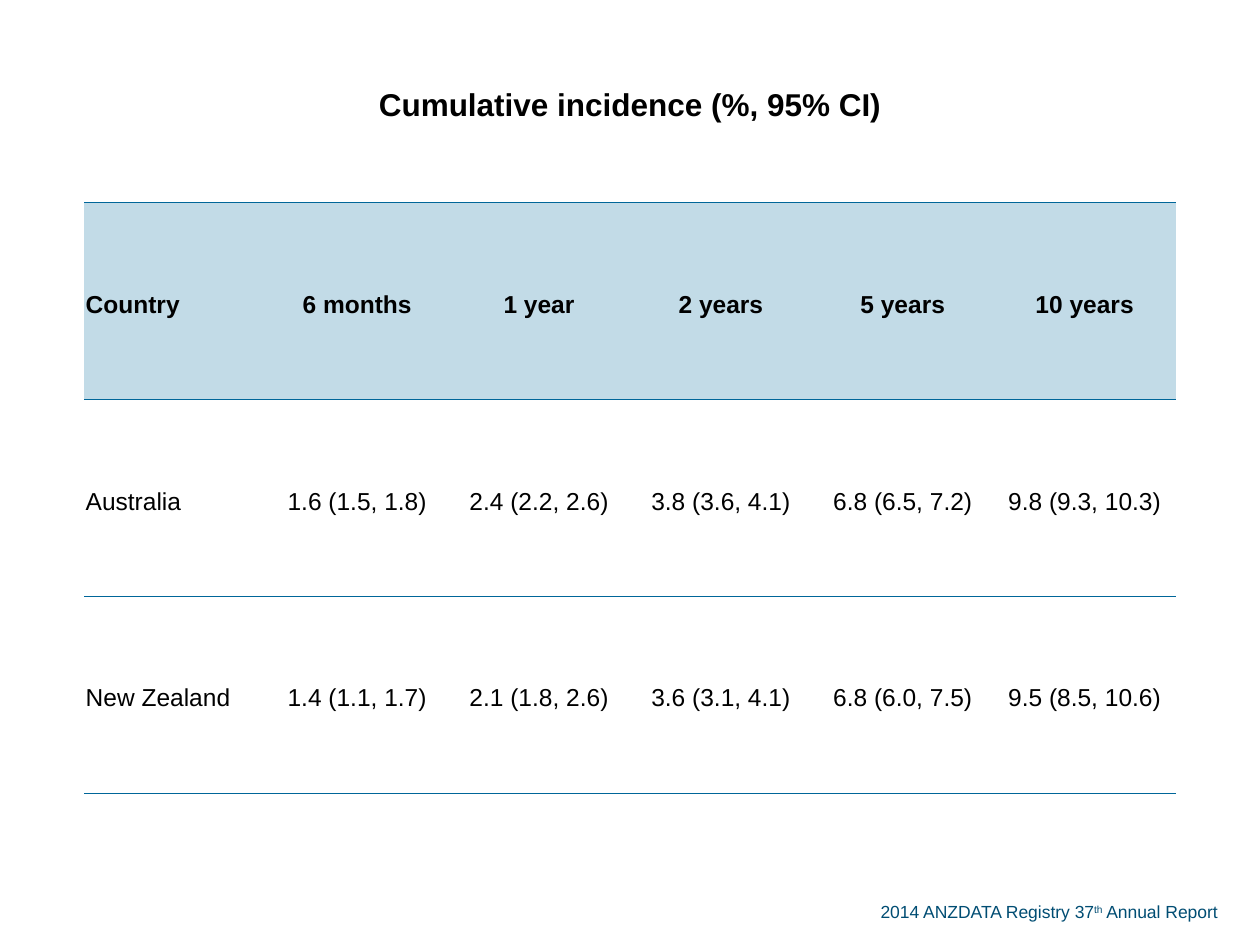
from dataclasses import dataclass

from lxml import etree
from pptx import Presentation
from pptx.dml.color import RGBColor
from pptx.enum.text import MSO_ANCHOR, MSO_AUTO_SIZE, PP_ALIGN
from pptx.oxml.ns import qn
from pptx.util import Inches, Pt

LEFT, CENTER = PP_ALIGN.LEFT, PP_ALIGN.CENTER
MIDDLE = MSO_ANCHOR.MIDDLE
FIT_SHAPE = MSO_AUTO_SIZE.SHAPE_TO_FIT_TEXT
BLANK_LAYOUT = 6
PLAIN_TABLE_STYLE = "{2D5ABB26-0587-4C30-8999-92F81FD0307C}"


@dataclass(frozen=True)
class Theme:
    font: str = "Arial"
    text: str = "000000"
    rule: str = "006699"
    header_fill: str = "C2DBE7"
    source: str = "004D73"
    title_size: float = 18
    table_size: float = 14
    source_size: float = 10
    rule_width: float = 0.5


THEME = Theme()

TITLE = "Cumulative incidence (%, 95% CI)"
ROWS = [
    ["Country", "6 months", "1 year", "2 years", "5 years", "10 years"],
    ["Australia", "1.6 (1.5, 1.8)", "2.4 (2.2, 2.6)", "3.8 (3.6, 4.1)",
     "6.8 (6.5, 7.2)", "9.8 (9.3, 10.3)"],
    ["New Zealand", "1.4 (1.1, 1.7)", "2.1 (1.8, 2.6)", "3.6 (3.1, 4.1)",
     "6.8 (6.0, 7.5)", "9.5 (8.5, 10.6)"],
]


def style_font(font, size, color, bold=False):
    font.name = THEME.font
    font.size = Pt(size)
    font.bold = bold
    font.color.rgb = RGBColor.from_string(color)


def add_rules(cell, edges):
    """Draw cell borders; edges are tag names in schema order (lnT, lnB)."""
    properties = cell._tc.get_or_add_tcPr()
    for position, edge in enumerate(edges):
        line = etree.Element(qn(f"a:{edge}"), w=str(Pt(THEME.rule_width)))
        fill = etree.SubElement(line, qn("a:solidFill"))
        etree.SubElement(fill, qn("a:srgbClr"), val=THEME.rule)
        properties.insert(position, line)


def fill_cell(cell, text, align, size, bold):
    cell.vertical_anchor = MIDDLE
    cell.margin_left = cell.margin_top = cell.margin_right = Inches(0.01)
    cell.margin_bottom = 0
    para = cell.text_frame.paragraphs[0]
    para.text = text
    para.alignment = align
    para.line_spacing = 1.19
    para.space_after = Pt(14)
    style_font(para.font, size, THEME.text, bold)


def add_incidence_table(page, left, top, width, height):
    column_count = len(ROWS[0])
    row_count = len(ROWS) + 1
    frame = page.shapes.add_table(row_count, column_count, left, top, width, height)
    table = frame.table
    table.first_row = table.horz_banding = False
    table._tbl.tblPr.find(qn("a:tableStyleId")).text = PLAIN_TABLE_STYLE

    title_height = Inches(1.61)
    table.rows[0].height = title_height
    for row_number in range(1, row_count):
        table.rows[row_number].height = (height - title_height) // len(ROWS)

    title = table.cell(0, 0)
    title.merge(table.cell(0, column_count - 1))
    fill_cell(title, TITLE, CENTER, THEME.title_size, True)

    rules = {0: ["lnB"], 1: ["lnT", "lnB"], 2: ["lnT"], row_count - 1: ["lnB"]}
    for row_number, values in enumerate(ROWS, start=1):
        header = row_number == 1
        for column, value in enumerate(values):
            cell = table.cell(row_number, column)
            align = CENTER if column else LEFT
            fill_cell(cell, value, align, THEME.table_size, header)
            if header:
                cell.fill.solid()
                cell.fill.fore_color.rgb = RGBColor.from_string(THEME.header_fill)
            else:
                cell.fill.background()
    for row_number, edges in rules.items():
        for column in range(column_count):
            add_rules(table.cell(row_number, column), edges)


def add_source(page, left, top, width, height):
    box = page.shapes.add_textbox(left, top, width, height)
    box.text_frame.word_wrap = False
    box.text_frame.auto_size = FIT_SHAPE
    para = box.text_frame.paragraphs[0]
    for text, baseline in [("2014 ANZDATA Registry 37", None), ("th", "30000"),
                           (" Annual Report", None)]:
        span = para.add_run()
        span.text = text
        if baseline:
            span.font._element.set("baseline", baseline)
    style_font(para.font, THEME.source_size, THEME.source)


def main():
    deck = Presentation()
    deck.slide_width, deck.slide_height = Inches(10), Inches(7.5)
    page = deck.slides.add_slide(deck.slide_layouts[BLANK_LAYOUT])
    add_source(page, Inches(6.89), Inches(7.1), Inches(2.99), Inches(0.27))
    add_incidence_table(page, Inches(0.67), 0, Inches(8.66), Inches(6.3))
    deck.save("out.pptx")


if __name__ == "__main__":
    main()
